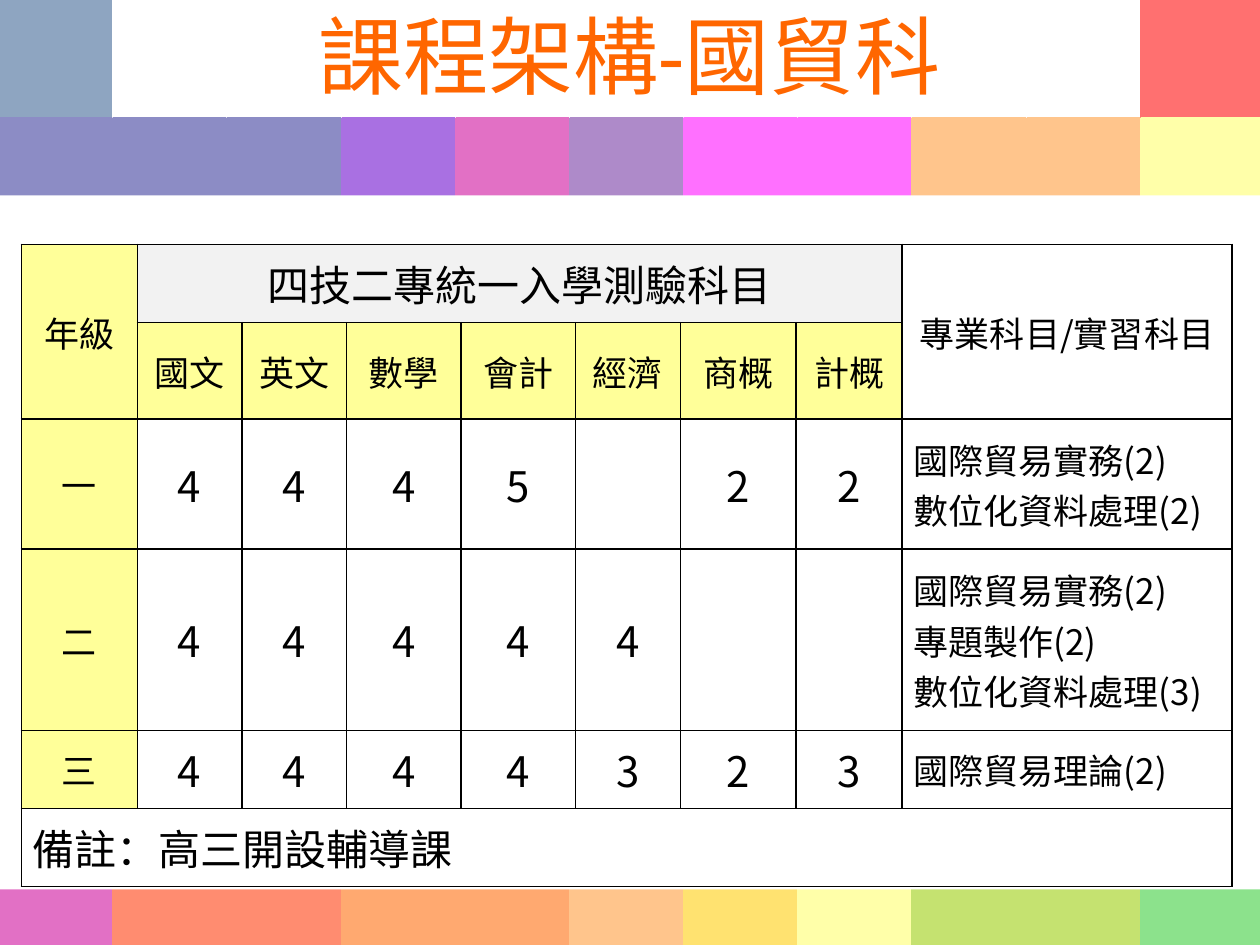
from lxml import etree
from pptx import Presentation
from pptx.dml.color import RGBColor
from pptx.enum import shapes, text
from pptx.oxml import ns
from pptx.util import Inches, Pt

# Content
TITLE = "課程架構-國貿科"
GRADE = "年級"
EXAM = "四技二專統一入學測驗科目"
PRACTICE = "專業科目/實習科目"
SUBJECTS = ["國文", "英文", "數學", "會計", "經濟", "商概", "計概"]
GRADES = [
    ("一", ["4", "4", "4", "5", "", "2", "2"], ["國際貿易實務(2)", "數位化資料處理(2)"]),
    ("二", ["4", "4", "4", "4", "4", "", ""],
     ["國際貿易實務(2)", "專題製作(2)", "數位化資料處理(3)"]),
    ("三", ["4", "4", "4", "4", "3", "2", "3"], ["國際貿易理論(2)"]),
]
NOTE = "備註：高三開設輔導課"

# Format
FONT = "Noto Sans CJK SC"
COLORS = {
    "white": "FFFFFF", "black": "000000", "title": "FF6600", "label": "FFFF99",
    "exam": "F2F2F2", "steel": "376092", "navy": "333399", "purple": "6600CC",
    "pink": "CC0099", "violet": "7030A0", "magenta": "FF00FF", "orange": "FF9933",
    "dark orange": "FF6600", "vermilion": "FF3300", "red": "FF0000",
    "gold": "FFCC00", "yellow": "FFFF66", "lime": "99CC00", "green": "33CC33",
}
# Tile rows: top, then the colour and number of each run of tiles
TILE_ROWS = [
    (0, [("steel", 1), ("white", 9), ("red", 1)]),
    (0.94, [("navy", 3), ("purple", 1), ("pink", 1), ("violet", 1),
            ("magenta", 2), ("orange", 2), ("yellow", 1)]),
    (6.56, [("pink", 1), ("vermilion", 2), ("dark orange", 2), ("orange", 1),
            ("gold", 1), ("yellow", 1), ("lime", 2), ("green", 1)]),
]
TILE = 0.94
TILE_STEP = (10 - TILE) / 10
# White panels: left, top, width, height, opacity in percent
PANELS = [
    (0, 1.86, 10, 4.73, 100),
    (-0.35, -0.34, 10.95, 8.27, 44),
    (-0.02, 1.55, 10.11, 0.55, 100),
    (-0.05, 6.51, 10.11, 0.55, 100),
]
COLUMN_WIDTHS = [0.92, 0.83, 0.83, 0.91, 0.91, 0.83, 0.92, 0.84, 2.62]
ROW_HEIGHTS = [0.62, 0.62, 1.03, 1.44, 0.62, 0.62]
LAST_COLUMN = len(COLUMN_WIDTHS) - 1
LAST_ROW = len(ROW_HEIGHTS) - 1
CENTER, LEFT = text.PP_ALIGN.CENTER, text.PP_ALIGN.LEFT


def color(name):
    return RGBColor.from_string(COLORS[name])


def add_rectangle(page, left, top, width, height, fill, outlined=False, opacity=100):
    box = page.shapes.add_shape(shapes.MSO_SHAPE.RECTANGLE, Inches(left), Inches(top),
                                Inches(width), Inches(height))
    box.shadow.inherit = False
    box.fill.solid()
    box.fill.fore_color.rgb = color(fill)
    if outlined:
        box.line.color.rgb = color(fill)
        box.line.width = Pt(2)
    else:
        box.line.fill.background()
    if opacity < 100:
        tint = box.fill._xPr.find(".//" + ns.qn("a:srgbClr"))
        etree.SubElement(tint, ns.qn("a:alpha"), val=str(opacity * 1000))


def write(para, words, size, align, ink="black", latin=FONT):
    para.alignment = align
    span = para.add_run()
    span.text = words
    for name, value in {"size": Pt(size), "name": latin, "bold": False}.items():
        setattr(span.font, name, value)
    span.font.color.rgb = color(ink)
    etree.SubElement(span._r.get_or_add_rPr(), ns.qn("a:ea"), typeface=FONT)


def set_borders(cell):
    properties = cell._tc.get_or_add_tcPr()
    for index, side in enumerate(["lnL", "lnR", "lnT", "lnB"]):
        line = etree.Element(ns.qn("a:" + side), w=str(Pt(1)))
        fill = etree.SubElement(line, ns.qn("a:solidFill"))
        etree.SubElement(fill, ns.qn("a:srgbClr"), val=COLORS["black"])
        properties.insert(index, line)


def fill_cell(cell, lines, size, align=CENTER, fill=None):
    if fill:
        cell.fill.solid()
        cell.fill.fore_color.rgb = color(fill)
    frame = cell.text_frame
    for index, words in enumerate(lines):
        para = frame.add_paragraph() if index else frame.paragraphs[0]
        write(para, words, size, align)
        hanging = para._p.get_or_add_pPr()
        hanging.set("marL", str(Inches(0.38)))
        hanging.set("indent", str(Inches(-0.38)))


def add_title(page):
    box = page.shapes.add_textbox(Inches(0.9), Inches(-0.04), Inches(8.19), Inches(0.94))
    frame = box.text_frame
    frame.word_wrap = True
    frame.vertical_anchor = text.MSO_ANCHOR.MIDDLE
    write(frame.paragraphs[0], TITLE, 48.6, CENTER, "title", "Calibri")


def add_curriculum(page):
    table = page.shapes.add_table(
        len(ROW_HEIGHTS), len(COLUMN_WIDTHS), Inches(0.17), Inches(1.94),
        Inches(sum(COLUMN_WIDTHS)), Inches(sum(ROW_HEIGHTS))).table
    table.first_row = table.horz_banding = False
    for column, width in zip(table.columns, COLUMN_WIDTHS):
        column.width = Inches(width)
    for row, height in zip(table.rows, ROW_HEIGHTS):
        row.height = Inches(height)
    for cell in table.iter_cells():
        cell.fill.background()
        cell.vertical_anchor = text.MSO_ANCHOR.MIDDLE
        for name, value in {"margin_left": 0.09, "margin_right": 0.09,
                            "margin_top": 0.05, "margin_bottom": 0.05}.items():
            setattr(cell, name, Inches(value))
        set_borders(cell)

    # Merged areas: first row and column, last row and column
    for top, left, bottom, right in [
            (0, 0, 1, 0), (0, 1, 0, LAST_COLUMN - 1),
            (0, LAST_COLUMN, 1, LAST_COLUMN), (LAST_ROW, 0, LAST_ROW, LAST_COLUMN)]:
        table.cell(top, left).merge(table.cell(bottom, right))

    # Headings
    fill_cell(table.cell(0, 0), [GRADE], 20, fill="label")
    fill_cell(table.cell(0, 1), [EXAM], 24, fill="exam")
    fill_cell(table.cell(0, LAST_COLUMN), [PRACTICE], 20)
    for column, subject in enumerate(SUBJECTS, 1):
        fill_cell(table.cell(1, column), [subject], 20, fill="label")

    # Hours by grade
    for row, (grade, hours, courses) in enumerate(GRADES, 2):
        fill_cell(table.cell(row, 0), [grade], 20, fill="label")
        for column, hour in enumerate(hours, 1):
            if hour:
                fill_cell(table.cell(row, column), [hour], 24)
        fill_cell(table.cell(row, LAST_COLUMN), courses, 20, LEFT)
    fill_cell(table.cell(LAST_ROW, 0), [NOTE], 24, LEFT)


def main():
    deck = Presentation()
    deck.slide_width, deck.slide_height = Inches(10), Inches(7.5)
    page = deck.slides.add_slide(deck.slide_layouts[6])

    # Background tiles, column by column so that each overlaps the one before
    rows = [(top, [name for name, count in runs for _ in range(count)])
            for top, runs in TILE_ROWS]
    for column in range(11):
        for top, names in rows:
            add_rectangle(page, column * TILE_STEP, top, TILE, TILE,
                          names[column], outlined=True)
    for left, top, width, height, opacity in PANELS:
        add_rectangle(page, left, top, width, height, "white", opacity=opacity)

    add_title(page)
    add_curriculum(page)
    deck.save("out.pptx")


if __name__ == "__main__":
    main()
